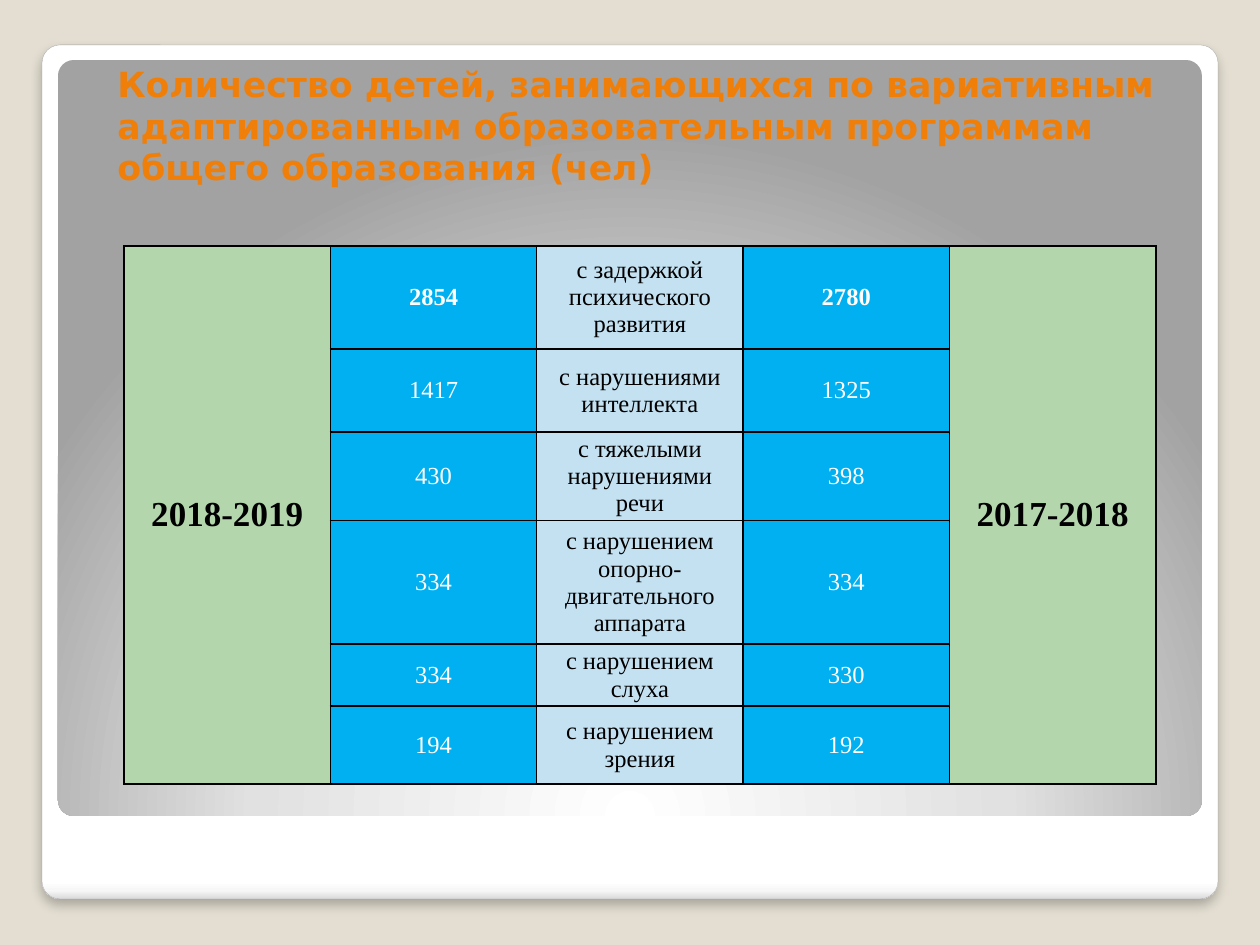
import pptx
import pptx.dml.color
import pptx.enum.shapes
import pptx.enum.text
import pptx.oxml
import pptx.oxml.ns
import pptx.util

EMU_PER_PX = 914400 / 126
COLORS = {
    "background": "E3DED1",
    "frame_line": "A4A4A4",
    "title": "F07F09",
    "year": "B3D6AC",
    "count": "00B0F0",
    "category": "C4E1F2",
    "black": "000000",
    "white": "FFFFFF",
}
TITLE = ("Количество детей, занимающихся по вариативным адаптированным "
         "образовательным программам общего образования (чел)")
YEARS = ("2018-2019", "2017-2018")
ROWS = [
    ("2854", "с задержкой психического развития", "2780", 103),
    ("1417", "с нарушениями интеллекта", "1325", 83),
    ("430", "с тяжелыми нарушениями речи", "398", 81),
    ("334", "с нарушением опорно-двигательного аппарата", "334", 124),
    ("334", "с нарушением слуха", "330", 62),
    ("194", "с нарушением зрения", "192", 78),
]
FRAME_STOPS = [(0, "FFFFFF"), (98, "FFFFFF"), (99, "F7F7F7"), (100, "DADADA")]
PANEL_STOPS = [(0, "FFFFFF"), (55, "E1E1E1"), (100, "A2A2A2")]
DOWNWARD = '<a:lin ang="5400000" scaled="0"/>'
FROM_BELOW = ('<a:path path="circle"><a:fillToRect l="50000" t="175000" '
              'r="50000" b="-75000"/></a:path>')


def px(length):
    """Turn pixels into EMU."""
    return pptx.util.Emu(round(length * EMU_PER_PX))


def rgb(name):
    """Look up a named colour."""
    return pptx.dml.color.RGBColor.from_string(COLORS[name])


def element(tag, attributes, content):
    """Make a DrawingML element."""
    return pptx.oxml.parse_xml(
        f'<a:{tag} {pptx.oxml.ns.nsdecls("a")} {attributes}>{content}</a:{tag}>')


def write_text(frame, text, *, size, color, font="Times New Roman", bold=False,
               align=pptx.enum.text.PP_ALIGN.CENTER):
    """Write one formatted paragraph."""
    paragraph = frame.paragraphs[0]
    paragraph.alignment = align
    run = paragraph.add_run()
    run.text = text
    run.font.name = font
    run.font.size = pptx.util.Pt(size)
    run.font.bold = bold
    run.font.color.rgb = rgb(color)


def add_rounded_panel(slide, box, stops, direction):
    """Add a rounded rectangle with a gradient fill."""
    panel = slide.shapes.add_shape(
        pptx.enum.shapes.MSO_SHAPE.ROUNDED_RECTANGLE, *map(px, box))
    panel.adjustments[0] = 0.021
    panel.shadow.inherit = False
    panel.line.fill.background()
    panel.fill.gradient()
    properties = panel._element.spPr
    colors = "".join(
        f'<a:gs pos="{position * 1000}"><a:srgbClr val="{color}"/></a:gs>'
        for position, color in stops)
    properties.replace(
        properties.find(pptx.oxml.ns.qn("a:gradFill")),
        element("gradFill", 'rotWithShape="1"',
                f"<a:gsLst>{colors}</a:gsLst>{direction}"))
    return panel


def add_frame(slide):
    """Add the white outer frame with its outline and shadow."""
    frame = add_rounded_panel(slide, (42, 45, 1176, 854), FRAME_STOPS, DOWNWARD)
    frame.line.color.rgb = rgb("frame_line")
    frame.line.width = pptx.util.Pt(0.16)
    effects = frame._element.spPr.find(pptx.oxml.ns.qn("a:effectLst"))
    effects.append(element(
        "outerShdw",
        f'blurRad="{pptx.util.Pt(6)}" dist="{pptx.util.Pt(4)}" dir="5400000" '
        'algn="tl" rotWithShape="0"',
        f'<a:srgbClr val="{COLORS["black"]}"><a:alpha val="25000"/></a:srgbClr>'))


def add_title(slide):
    """Add the heading above the table."""
    frame = slide.shapes.add_textbox(*map(px, (105, 65, 1071, 129))).text_frame
    frame.word_wrap = True
    frame.vertical_anchor = pptx.enum.text.MSO_ANCHOR.BOTTOM
    write_text(frame, TITLE, size=19.8, color="title", font="DejaVu Sans",
               bold=True, align=pptx.enum.text.PP_ALIGN.LEFT)


def style_cell(cell, fill):
    """Set fill, margins, anchor and borders of a cell."""
    cell.fill.solid()
    cell.fill.fore_color.rgb = rgb(fill)
    cell.vertical_anchor = pptx.enum.text.MSO_ANCHOR.MIDDLE
    cell.margin_left = cell.margin_right = px(9)
    cell.margin_top = cell.margin_bottom = 0
    line = f'<a:solidFill><a:srgbClr val="{COLORS["black"]}"/></a:solidFill>'
    for index, side in enumerate(("lnL", "lnR", "lnT", "lnB")):
        cell._tc.get_or_add_tcPr().insert(
            index, element(side, f'w="{pptx.util.Pt(1)}"', line))


def add_children_table(slide):
    """Add the counts by category for both school years."""
    heights = [row[-1] for row in ROWS]
    fills = ("year", "count", "category", "count", "year")
    table = slide.shapes.add_table(
        len(ROWS), len(fills), *map(px, (124, 246, 1032, sum(heights)))).table
    table.first_row = table.horz_banding = False
    for column in table.columns:
        column.width = px(206.4)
    for row_index, (current, category, previous, height) in enumerate(ROWS):
        table.rows[row_index].height = px(height)
        for column_index, fill in enumerate(fills):
            style_cell(table.cell(row_index, column_index), fill)
        for column_index, text in enumerate((current, category, previous), 1):
            is_count = fills[column_index] == "count"
            write_text(table.cell(row_index, column_index).text_frame, text,
                       size=14, color="white" if is_count else "black",
                       bold=is_count and row_index == 0)
    for column_index, year in zip((0, len(fills) - 1), YEARS):
        year_cell = table.cell(0, column_index)
        year_cell.merge(table.cell(len(ROWS) - 1, column_index))
        write_text(year_cell.text_frame, year, size=20, color="black", bold=True)


def main():
    """Build and save the slide."""
    deck = pptx.Presentation()
    deck.slide_width, deck.slide_height = px(1260), px(945)
    slide = deck.slides.add_slide(deck.slide_layouts[6])
    slide.background.fill.solid()
    slide.background.fill.fore_color.rgb = rgb("background")
    add_frame(slide)
    add_rounded_panel(slide, (58, 60, 1144, 756), PANEL_STOPS, FROM_BELOW)
    add_title(slide)
    add_children_table(slide)
    deck.save("out.pptx")


if __name__ == "__main__":
    main()
